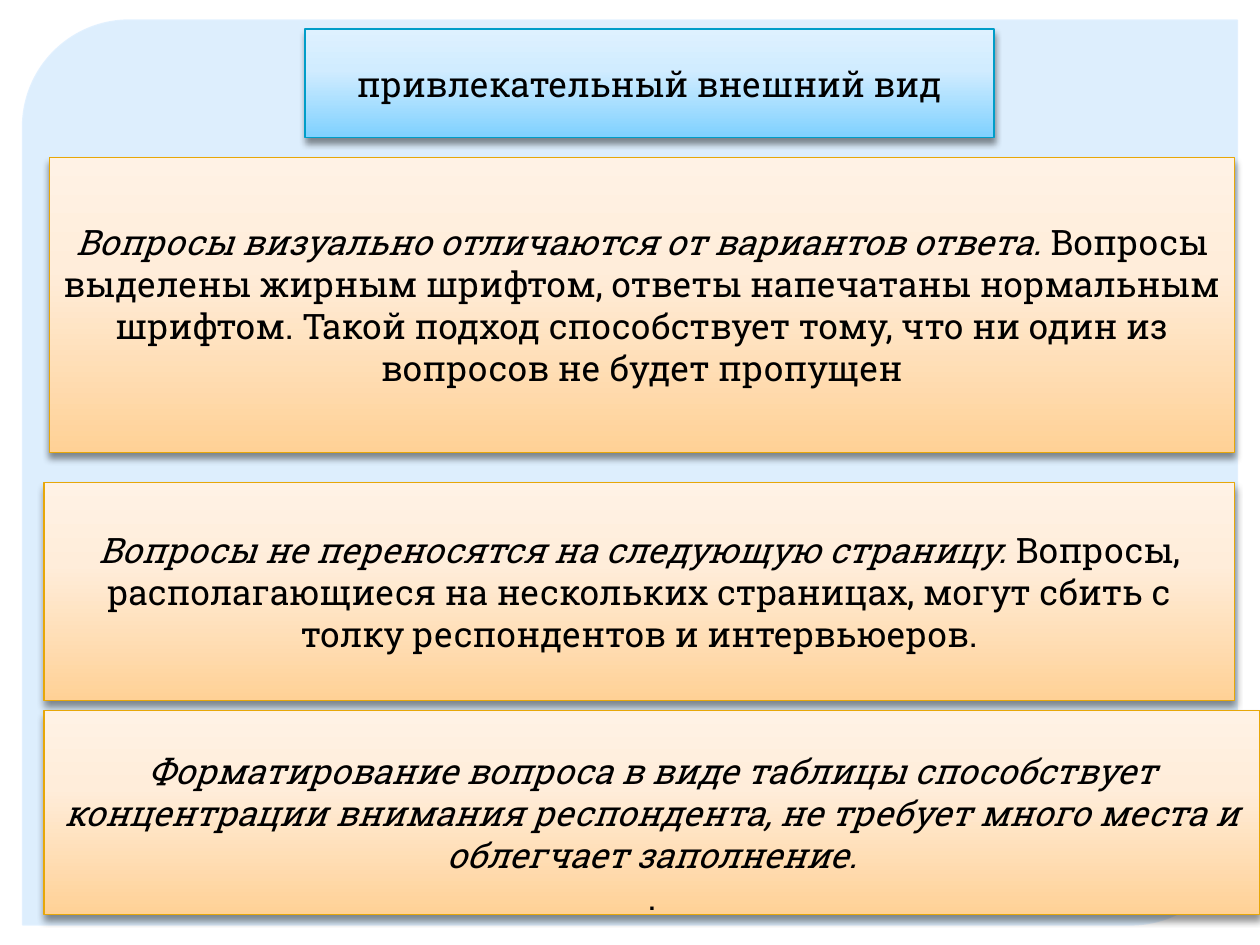
import pptx
import pptx.util
import pptx.dml.color
import pptx.enum.shapes
import pptx.enum.text
import pptx.oxml
import pptx.oxml.ns

Inches = pptx.util.Inches
Pt = pptx.util.Pt
qn = pptx.oxml.ns.qn
FONT = "Roboto Slab"
COLORS = {
    "panel": "CBE5FC", "rim": "E0F0FF", "text": "000000",
    "blue": ["7FD1FF", "D1ECFF", "DEF1FF"], "cyan": "009DC8",
    "peach": ["FFD196", "FFEDDA", "FFF2E5"], "gold": "E7A709",
}
STOPS = [0, 62, 100]
CARDS = [
    ((0.39, 1.25, 9.41, 2.34), 0.05, [[
        ("Вопросы визуально отличаются от вариантов ответа. ", True),
        ("Вопросы выделены жирным шрифтом, ответы напечатаны нормальным "
         "шрифтом. Такой подход способствует тому, что ни один из вопросов "
         "не будет пропущен", False)]]),
    ((0.35, 3.83, 9.45, 1.73), 0.05, [[
        ("Вопросы не переносятся на следующую страницу. ", True),
        ("Вопросы, располагающиеся на нескольких страницах, могут сбить с "
         "толку респондентов и интервьюеров.", False)]]),
    ((0.35, 5.64, 9.65, 1.62), 0.38, [
        [("Форматирование вопроса в виде таблицы способствует концентрации "
          "внимания респондента, не требует много места и облегчает "
          "заполнение.", True)],
        [(".", False)]]),
]


def rgb(name):
    return pptx.dml.color.RGBColor.from_string(COLORS[name])


def node(tag, body):
    return pptx.oxml.parse_xml(
        f"<a:{tag} {pptx.oxml.ns.nsdecls('a')}>{body}</a:{tag}>")


def fade(fill, share):
    color = fill._xPr.find(".//" + qn("a:srgbClr"))
    color.append(pptx.oxml.parse_xml(
        f'<a:alpha {pptx.oxml.ns.nsdecls("a")} val="{share * 1000}"/>'))


def style(shape, tint, edge):
    shape.fill.gradient()
    shape.fill.gradient_angle = 90
    old = shape._element.spPr.find(".//" + qn("a:gsLst"))
    stops = "".join(
        f'<a:gs pos="{pos * 1000}"><a:srgbClr val="{color}"/></a:gs>'
        for pos, color in zip(STOPS, COLORS[tint]))
    old.getparent().replace(old, node("gsLst", stops))
    shape.line.color.rgb = rgb(edge)
    shape.line.width = Pt(0.75)
    shape._element.spPr.append(node("effectLst", (
        f'<a:outerShdw blurRad="{Pt(4)}" dist="{Pt(3)}" dir="5400000" '
        'rotWithShape="0"><a:srgbClr val="000000"><a:alpha val="43000"/>'
        '</a:srgbClr></a:outerShdw>')))


def write(shape, paras, top=0.05):
    frame = shape.text_frame
    frame.word_wrap = True
    frame.auto_size = pptx.enum.text.MSO_AUTO_SIZE.NONE
    frame.vertical_anchor = pptx.enum.text.MSO_ANCHOR.MIDDLE
    frame.margin_top = Inches(top)
    for num, runs in enumerate(paras):
        para = frame.add_paragraph() if num else frame.paragraphs[0]
        para.alignment = pptx.enum.text.PP_ALIGN.CENTER
        para.font.name = FONT
        para.font.size = Pt(20)
        para.font.color.rgb = rgb("text")
        for text, slant in runs:
            run = para.add_run()
            run.text = text
            run.font.italic = slant


def panel(slide, box):
    shape = slide.shapes.add_shape(
        pptx.enum.shapes.MSO_SHAPE.ROUND_2_DIAG_RECTANGLE,
        *map(Inches, box))
    shape.adjustments[0] = 0.118
    shape.adjustments[1] = 0
    shape.shadow.inherit = False
    shape.fill.solid()
    shape.fill.fore_color.rgb = rgb("panel")
    fade(shape.fill, 65)
    shape.line.color.rgb = rgb("rim")
    shape.line.width = Pt(0.87)
    fade(shape.line.fill, 88)
    slide.shapes._spTree.insert(2, shape._element)


def title(slide, box):
    shape = slide.shapes.title
    shape.left, shape.top, shape.width, shape.height = map(Inches, box)
    style(shape, "blue", "cyan")
    write(shape, [[("привлекательный внешний вид", False)]])


def card(slide, box, top, paras):
    shape = slide.shapes.add_shape(
        pptx.enum.shapes.MSO_SHAPE.RECTANGLE, *map(Inches, box))
    style(shape, "peach", "gold")
    write(shape, paras, top)


def main():
    deck = pptx.Presentation()
    deck.slide_width = Inches(10)
    deck.slide_height = Inches(7.5)
    slide = deck.slides.add_slide(deck.slide_layouts[5])
    panel(slide, (0.18, 0.16, 9.64, 7.18))
    title(slide, (2.42, 0.23, 5.47, 0.86))
    for box, top, paras in CARDS:
        card(slide, box, top, paras)
    deck.save("out.pptx")


if __name__ == "__main__":
    main()
